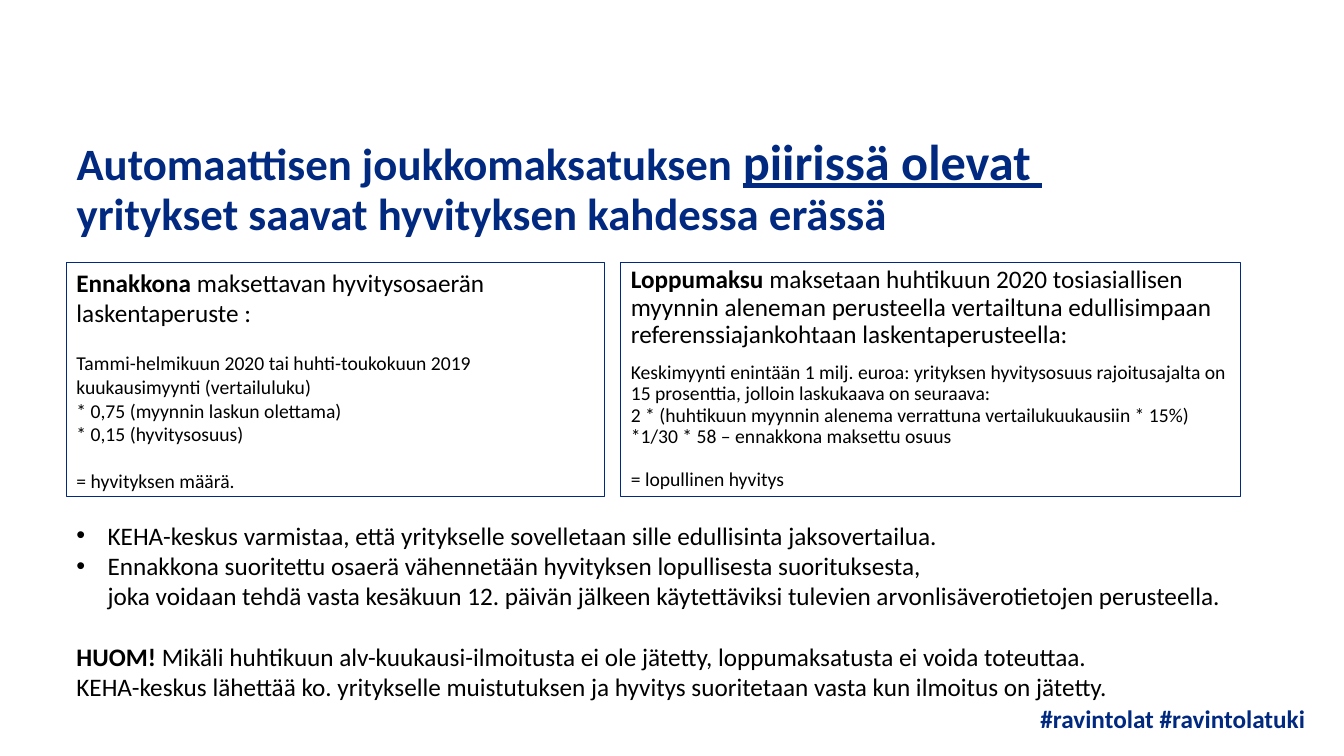
"""Build the slide on paying the restaurant compensation in two instalments."""
from copy import deepcopy
from dataclasses import dataclass

from lxml import etree
from pptx import Presentation
from pptx.dml.color import RGBColor
from pptx.enum import shapes, text
from pptx.util import Inches, Pt


@dataclass
class Theme:
    font: str = "Calibri"
    navy: RGBColor = RGBColor(0x00, 0x29, 0x7F)
    black: RGBColor = RGBColor(0, 0, 0)
    title: int = 32
    accent: int = 36
    body: int = 18
    small: int = 14
    border: float = 0.75
    tight: float = 0.9


theme = Theme()
prs = Presentation()
prs.slide_width, prs.slide_height = Inches(13.33), Inches(7.5)
s = prs.slides.add_slide(prs.slide_layouts[5])


def area(left, top, width, height):
    """Turn percentages of the slide into lengths."""
    w, h = prs.slide_width, prs.slide_height
    return [int(v * side / 100) for v, side in zip((left, top, width, height), (w, h, w, h))]


def write(tf, paragraphs, color=theme.black, spacing=1.0):
    """Fill a frame with (space before, bullet, runs) paragraphs."""
    tf.word_wrap = True
    tf.auto_size = text.MSO_AUTO_SIZE.NONE
    tf.vertical_anchor = text.MSO_ANCHOR.TOP
    for i, (before, bullet, runs) in enumerate(paragraphs):
        p = tf.add_paragraph() if i else tf.paragraphs[0]
        p.alignment = text.PP_ALIGN.LEFT
        p.line_spacing = spacing
        p.space_before = Pt(before)
        if bullet:
            pPr = p._p.get_or_add_pPr()
            pPr.set("marL", str(Inches(0.31)))
            pPr.set("indent", str(-Inches(0.31)))
            ns = pPr.nsmap["a"]
            etree.SubElement(pPr, f"{{{ns}}}buFont").set("typeface", "Arial")
            etree.SubElement(pPr, f"{{{ns}}}buChar").set("char", "•")
        for words, size, bold, underline in runs:
            for n, line in enumerate(words.split("\n")):
                if n:
                    p.add_line_break()
                    p._p[-1].append(deepcopy(r._r.rPr))
                if line:
                    r = p.add_run()
                    r.text = line
                    r.font.name, r.font.size = theme.font, Pt(size)
                    r.font.bold, r.font.underline = bold, underline
                    r.font.color.rgb = color


title = s.shapes.title
title.left, title.top, title.width, title.height = area(4.95, 17.47, 86.27, 12.13)
write(title.text_frame, [(0, False, [
    ("Automaattisen joukkomaksatuksen ", theme.title, True, False),
    ("piirissä olevat \n", theme.accent, True, True),
    ("yritykset saavat hyvityksen kahdessa erässä", theme.title, True, False),
])], theme.navy, theme.tight)

advance = [
    (0, False, [
        ("Ennakkona", theme.body, True, False),
        (" maksettavan hyvitysosaerän laskentaperuste :", theme.body, False, False)]),
    (17, False, [(
        "Tammi-helmikuun 2020 tai huhti-toukokuun 2019 kuukausimyynti (vertailuluku)\n"
        "* 0,75 (myynnin laskun olettama)\n* 0,15 (hyvitysosuus)", theme.small, False, False)]),
    (17, False, [("= hyvityksen määrä.", theme.small, False, False)]),
]
final = [
    (0, False, [
        ("Loppumaksu", theme.body, True, False),
        (" maksetaan huhtikuun 2020 tosiasiallisen myynnin aleneman perusteella vertailtuna "
         "edullisimpaan referenssiajankohtaan laskentaperusteella:", theme.body, False, False)]),
    (10, False, [(
        "Keskimyynti enintään 1 milj. euroa: yrityksen hyvitysosuus rajoitusajalta on "
        "15 prosenttia, jolloin laskukaava on seuraava: \n"
        "2 * (huhtikuun myynnin alenema verrattuna vertailukuukausiin * 15%) "
        "*1/30 * 58 – ennakkona maksettu osuus", theme.small, False, False)]),
    (15.5, False, [("= lopullinen hyvitys", theme.small, False, False)]),
]
for left, width, paragraphs, spacing in (
        (4.95, 40, advance, 1.0), (46.2, 46.12, final, theme.tight)):
    sp = s.shapes.add_shape(shapes.MSO_SHAPE.RECTANGLE, *area(left, 34.67, width, 31.07))
    sp.shadow.inherit = False
    sp.fill.background()
    sp.line.color.rgb = theme.navy
    sp.line.width = Pt(theme.border)
    write(sp.text_frame, paragraphs, spacing=spacing)

notes = s.shapes.add_textbox(*area(4.95, 68.13, 91.67, 25.6))
write(notes.text_frame, [
    (0, True, [("KEHA-keskus varmistaa, että yritykselle sovelletaan sille edullisinta "
                "jaksovertailua.", theme.body, False, False)]),
    (0, True, [("Ennakkona suoritettu osaerä vähennetään hyvityksen lopullisesta suorituksesta, \n"
                "joka voidaan tehdä vasta kesäkuun 12. päivän jälkeen käytettäviksi tulevien "
                "arvonlisäverotietojen perusteella.", theme.body, False, False)]),
    (22, False, [
        ("HUOM! ", theme.body, True, False),
        ("Mikäli huhtikuun alv-kuukausi-ilmoitusta ei ole jätetty, loppumaksatusta ei voida "
         "toteuttaa. \nKEHA-keskus lähettää ko. yritykselle muistutuksen ja hyvitys suoritetaan "
         "vasta kun ilmoitus on jätetty.", theme.body, False, False)]),
])

hashtags = s.shapes.add_textbox(*area(76.67, 92.4, 21.38, 5.33))
write(hashtags.text_frame, [
    (0, False, [("#ravintolat #ravintolatuki", theme.body, True, False)])], theme.navy)
hashtags.text_frame.word_wrap = False

prs.save("out.pptx")
